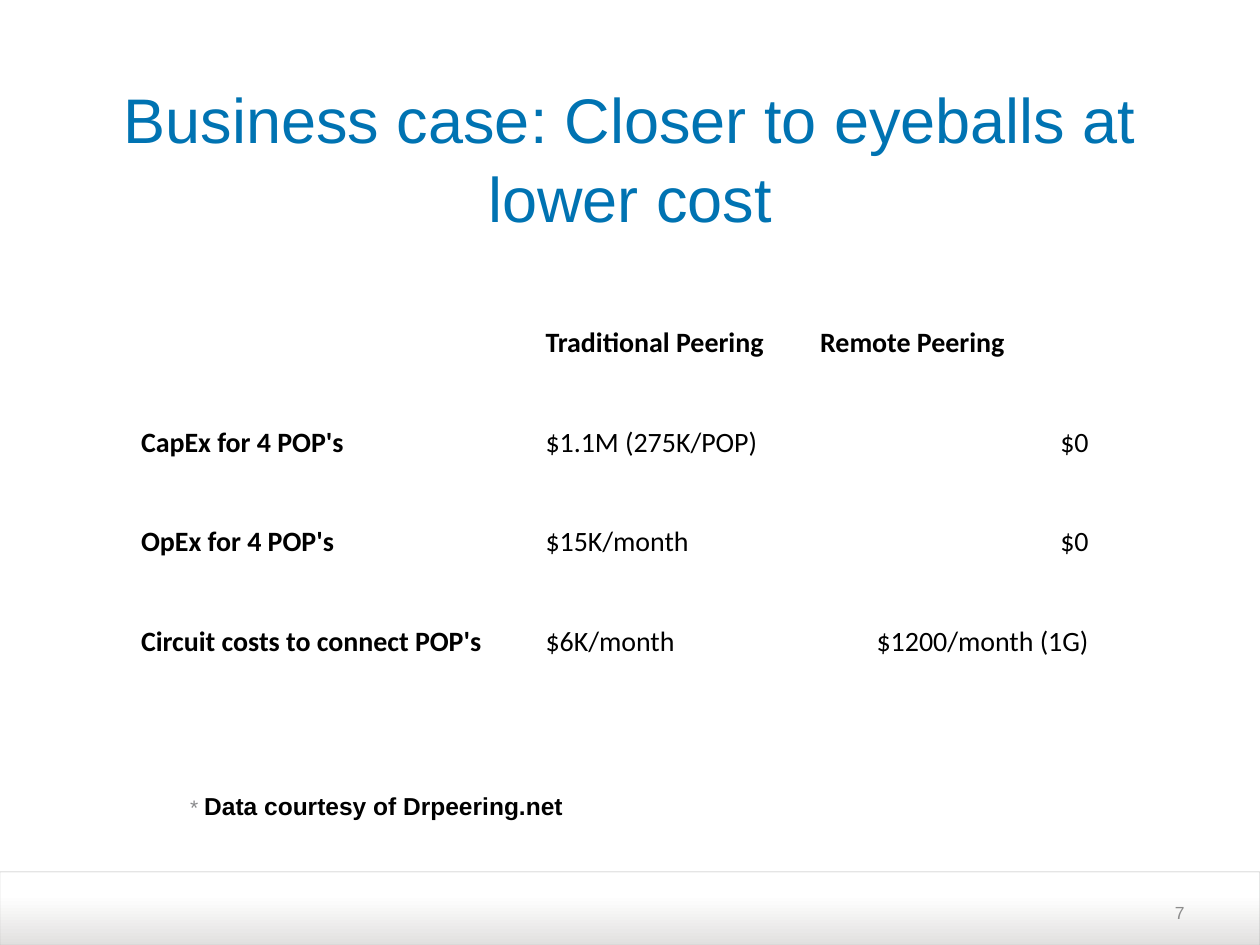
from dataclasses import dataclass

from lxml import etree
from pptx import Presentation
from pptx.dml.color import RGBColor
from pptx.enum import shapes, text
from pptx.oxml.ns import qn
from pptx.util import Inches, Pt


@dataclass(frozen=True)
class Theme:
    sans: str = "Arial"
    body: str = "Calibri"
    blue: str = "0073B2"
    black: str = "000000"
    gray: str = "8C8C8C"
    star: str = "88898B"
    edge: str = "A6A6A6"
    base: str = "E1E0DF"
    white: str = "FFFFFF"
    title: int = 36
    cell: int = 16
    note: int = 14
    mark: int = 12
    num: int = 10


T = Theme()
ALIGN = text.PP_ALIGN
MIDDLE = text.MSO_ANCHOR.MIDDLE


def style(font, name, size, color, bold=False):
    font.name, font.size, font.bold = name, Pt(size), bold
    font.color.rgb = RGBColor.from_string(color)


def add_box(x, y, w, h, side):
    """Add a wrapping text box with equal side insets; return its frame."""
    frame = slide.shapes.add_textbox(Inches(x), Inches(y), Inches(w), Inches(h)).text_frame
    frame.word_wrap = True
    frame.margin_left = frame.margin_right = Inches(side)
    return frame


prs = Presentation()
prs.slide_width, prs.slide_height = Inches(10), Inches(7.5)
slide = prs.slides.add_slide(prs.slide_layouts[6])

# Footer band
band = slide.shapes.add_shape(
    shapes.MSO_SHAPE.ROUND_2_SAME_RECTANGLE, Inches(0), Inches(6.92), Inches(10), Inches(0.58))
band.shadow.inherit = False
band.adjustments[0] = band.adjustments[1] = 0
band.fill.gradient()
band.fill.gradient_angle = 90
for stop, (pos, color) in zip(band.fill.gradient_stops, [(0, T.base), (0.68, T.white)]):
    stop.position = pos
    stop.color.rgb = RGBColor.from_string(color)
band.line.width = Pt(0.25)
band.line.color.rgb = RGBColor.from_string(T.edge)
edge = band.line.fill._xPr.find(qn("a:solidFill"))[0]
etree.SubElement(edge, qn("a:alpha"), val="79000")

# Page number and title
page = add_box(7.17, 7.04, 2.33, 0.4, 0.1)
page.vertical_anchor = MIDDLE
para = page.paragraphs[0]
para.text, para.alignment = "7", ALIGN.RIGHT
style(para.font, T.sans, T.num, T.gray)

title = add_box(0.5, 0.69, 9, 1.1, 0)
title.vertical_anchor = MIDDLE
para = title.paragraphs[0]
para.text, para.alignment = "Business case: Closer to eyeballs at lower cost", ALIGN.CENTER
para.line_spacing = 1.05
style(para.font, T.sans, T.title, T.blue)

# Cost table
costs = [
    ("", "Traditional Peering", "Remote Peering"),
    ("CapEx for 4 POP's", "$1.1M (275K/POP)", "$0"),
    ("OpEx for 4 POP's", "$15K/month", "$0"),
    ("Circuit costs to connect POP's", "$6K/month", "$1200/month (1G)"),
]
table = slide.shapes.add_table(
    4, 3, Inches(1.11), Inches(2.07), Inches(7.56), Inches(3.16)).table
table.first_row = table.horz_banding = False
for col, width in zip(table.columns, (3.21, 2.18, 2.18)):
    col.width = Inches(width)
for r, row in enumerate(costs):
    table.rows[r].height = Inches(0.79)
    for c, words in enumerate(row):
        cell = table.cell(r, c)
        cell.fill.background()
        cell.vertical_anchor = text.MSO_ANCHOR.BOTTOM
        cell.margin_left = cell.margin_top = Inches(0.01)
        cell.margin_right, cell.margin_bottom = Inches(0.04), 0
        para = cell.text_frame.paragraphs[0]
        para.text = words
        para.alignment = ALIGN.RIGHT if r and c == 2 else ALIGN.LEFT
        style(para.font, T.body, T.cell, T.black, bold=r == 0 or c == 0)

# Data credit
note = add_box(1.51, 6.23, 4, 0.4, 0).paragraphs[0]
for words, size, color, bold in [
    ("* ", T.mark, T.star, False),
    ("Data courtesy of Drpeering.net", T.note, T.black, True),
]:
    run = note.add_run()
    run.text = words
    style(run.font, T.sans, size, color, bold)

prs.save("out.pptx")
